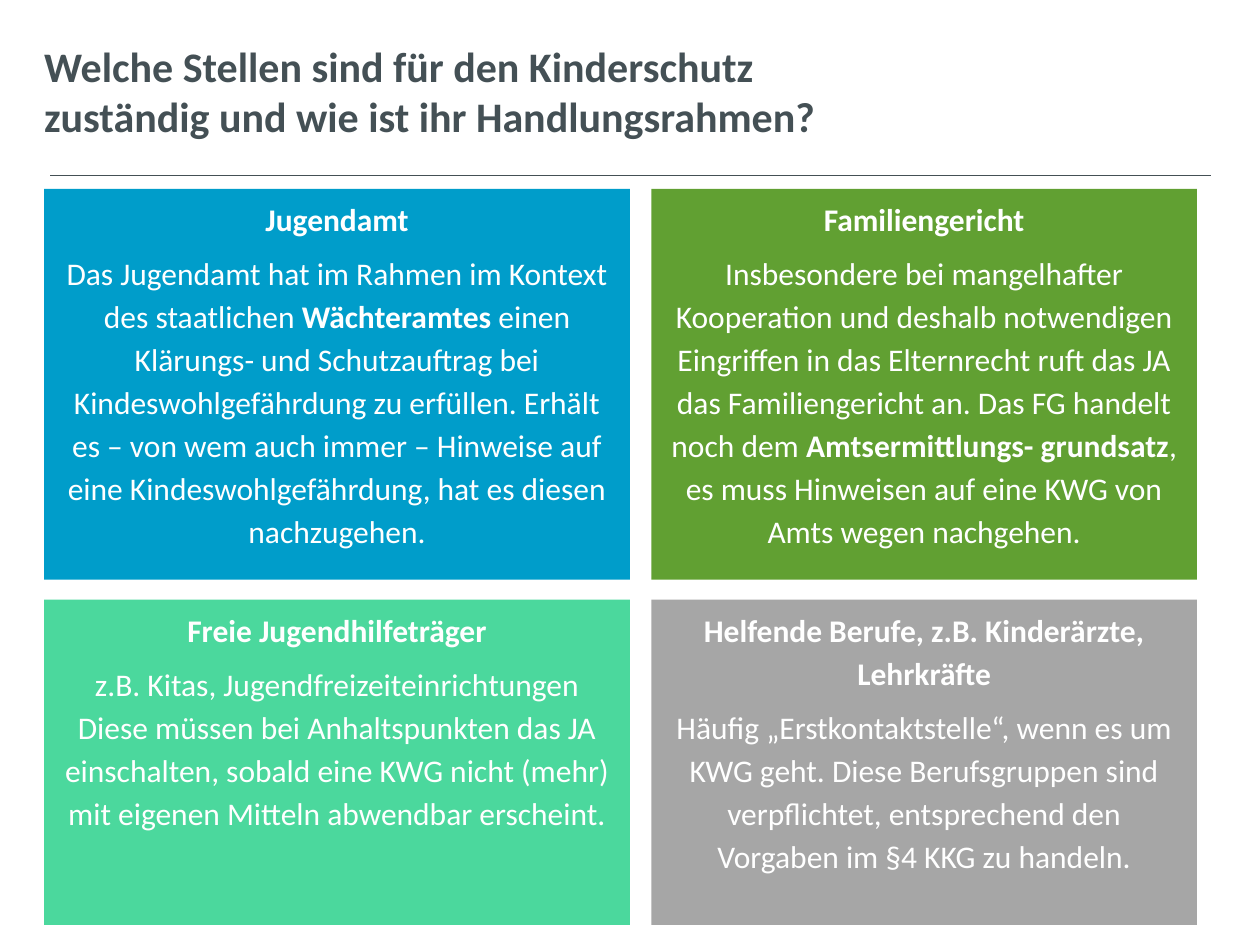
from lxml import etree
from pptx import Presentation
from pptx.dml.color import RGBColor
from pptx.enum.shapes import MSO_CONNECTOR, MSO_SHAPE
from pptx.enum.text import MSO_ANCHOR, MSO_AUTO_SIZE, PP_ALIGN
from pptx.oxml.ns import qn
from pptx.util import Inches, Pt

LINE = MSO_CONNECTOR.STRAIGHT
RECT = MSO_SHAPE.RECTANGLE
TOP, MIDDLE = MSO_ANCHOR.TOP, MSO_ANCHOR.MIDDLE
NO_FIT = MSO_AUTO_SIZE.NONE
LEFT, CENTER = PP_ALIGN.LEFT, PP_ALIGN.CENTER

FONT = "Calibri"
SLATE, WHITE = "445055", "FFFFFF"
TITLE = "Welche Stellen sind für den Kinderschutz zuständig und wie ist ihr Handlungsrahmen?"

# Columns are (left, width), rows are (top, height).
COLS = [(0.35, 4.65), (5.17, 4.33)]
ROWS = [(1.5, 3.1), (4.76, 2.58)]

# Fill, heading and paragraphs, row by row; ** encloses bold words.
CARDS = [
    ("009DCA", "Jugendamt", [
        "Das Jugendamt hat im Rahmen im Kontext des staatlichen **Wächteramtes** einen "
        "Klärungs- und Schutzauftrag bei Kindeswohlgefährdung zu erfüllen. Erhält es – von "
        "wem auch immer – Hinweise auf eine Kindeswohlgefährdung, hat es diesen nachzugehen."]),
    ("61A032", "Familiengericht", [
        "Insbesondere bei mangelhafter Kooperation und deshalb notwendigen Eingriffen in das "
        "Elternrecht ruft das JA das Familiengericht an. Das FG handelt noch dem "
        "**Amtsermittlungs- grundsatz**, es muss Hinweisen auf eine KWG von Amts wegen "
        "nachgehen."]),
    ("4BD89D", "Freie Jugendhilfeträger", [
        "z.B. Kitas, Jugendfreizeiteinrichtungen",
        "Diese müssen bei Anhaltspunkten das JA einschalten, sobald eine KWG nicht (mehr) mit "
        "eigenen Mitteln abwendbar erscheint."]),
    ("A6A6A6", "Helfende Berufe, z.B. Kinderärzte, Lehrkräfte", [
        "Häufig „Erstkontaktstelle“, wenn es um KWG geht. Diese Berufsgruppen sind "
        "verpflichtet, entsprechend den Vorgaben im §4 KKG zu handeln."]),
]


def color(code):
    return RGBColor.from_string(code)


def style(para, size, code, align):
    para.alignment = align
    para.font.name = FONT
    para.font.size = Pt(size)
    para.font.color.rgb = color(code)


def add_title(slide, left, top, width, height):
    title = slide.shapes.title
    title.left, title.top = Inches(left), Inches(top)
    title.width, title.height = Inches(width), Inches(height)
    frame = title.text_frame
    frame.text = TITLE
    frame.auto_size = NO_FIT
    frame.vertical_anchor = MIDDLE
    frame.margin_left = frame.margin_right = 0
    para = frame.paragraphs[0]
    style(para, 24, SLATE, LEFT)
    para.font.bold = True


def add_rule(slide, left, top, width):
    rule = slide.shapes.add_connector(
        LINE, Inches(left), Inches(top), Inches(left + width), Inches(top))
    rule.line.color.rgb = color(SLATE)
    rule.line.width = Pt(0.5)
    etree.SubElement(rule._element.spPr, qn("a:effectLst"))


def add_card(slide, left, top, width, height, fill, head, body):
    card = slide.shapes.add_shape(
        RECT, Inches(left), Inches(top), Inches(width), Inches(height))
    card.shadow.inherit = False
    card.fill.solid()
    card.fill.fore_color.rgb = color(fill)
    card.line.fill.background()
    frame = card.text_frame
    frame.word_wrap = True
    frame.vertical_anchor = TOP
    for i, text in enumerate([f"**{head}**", *body]):
        para = frame.paragraphs[0] if i == 0 else frame.add_paragraph()
        style(para, 18, WHITE, CENTER)
        para.line_spacing = 1.14
        para.space_after = Pt(0 if i else 6)
        for j, part in enumerate(text.split("**")):
            if part:
                run = para.add_run()
                run.text = part
                run.font.bold = j % 2 == 1


def main():
    deck = Presentation()
    deck.slide_width, deck.slide_height = Inches(10), Inches(7.5)
    slide = deck.slides.add_slide(deck.slide_layouts[5])
    add_title(slide, 0.35, 0.36, 7.02, 0.72)
    add_rule(slide, 0.4, 1.39, 9.21)
    cells = [(left, top, width, height) for top, height in ROWS for left, width in COLS]
    for cell, card in zip(cells, CARDS):
        add_card(slide, *cell, *card)
    deck.save("out.pptx")


if __name__ == "__main__":
    main()
